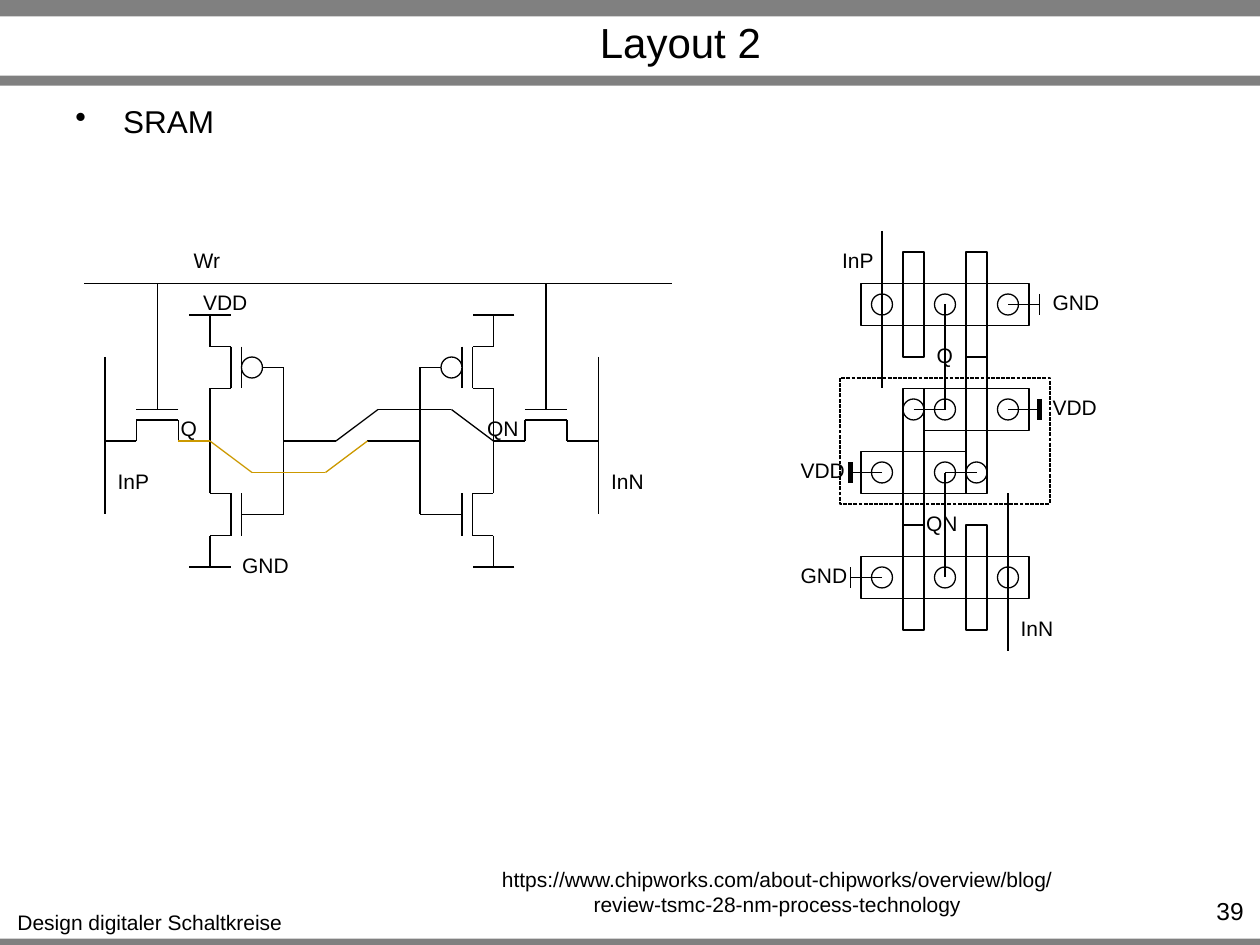
from dataclasses import dataclass

from lxml import etree
from pptx import Presentation
from pptx import util as u
from pptx.dml.color import RGBColor
from pptx.enum import dml, shapes, text
from pptx.oxml.ns import qn

COLS, ROWS = 120, 90  # the drawing grid: twelve steps to the inch
UNIT = u.Inches(10) // COLS


@dataclass(frozen=True)
class Theme:
    font: str = "Arial"
    ink: RGBColor = RGBColor(0, 0, 0)
    paper: RGBColor = RGBColor(255, 255, 255)
    band: RGBColor = RGBColor(0x80, 0x80, 0x80)
    accent: RGBColor = RGBColor(0xCC, 0x99, 0x00)
    title: int = 24
    body: int = 18
    number: int = 14
    label: int = 12
    thin: float = 0.75
    thick: float = 3


THEME = Theme()
LABEL_WIDTH = {"InP": 0.45, "InN": 0.46, "Wr": 0.41, "VDD": 0.56,
               "GND": 0.58, "Q": 0.33, "QN": 0.45}


def grid(steps):
    return u.Emu(round(steps * UNIT))


def as_is(x, y):
    return x, y


def mirrored(x, y):
    """Right half of the schematic: reflected about its middle column."""
    return 67 - x, y


def turned(x, y):
    """Lower half of the layout: half a turn about the cell's middle."""
    return 180 - x, 84 - y


# Kinds of element
def wire(slide, place, *points, color=THEME.ink, width=THEME.thin):
    """Straight connectors through the given grid points."""
    spots = [[grid(v) for v in place(*point)] for point in points]
    for start, end in zip(spots, spots[1:]):
        line = slide.shapes.add_connector(
            shapes.MSO_CONNECTOR.STRAIGHT, *start, *end)
        line.line.color.rgb = color
        line.line.width = u.Pt(width)
        etree.SubElement(line._element.spPr, qn("a:effectLst"))


def outline(slide, place, x1, y1, x2, y2,
            kind=shapes.MSO_SHAPE.RECTANGLE, fill=None, dash=None):
    """A shape between two opposite grid corners."""
    (ax, ay), (bx, by) = place(x1, y1), place(x2, y2)
    shape = slide.shapes.add_shape(
        kind, grid(min(ax, bx)), grid(min(ay, by)),
        grid(abs(bx - ax)), grid(abs(by - ay)))
    shape.shadow.inherit = False
    if fill is None:
        shape.fill.background()
    else:
        shape.fill.solid()
        shape.fill.fore_color.rgb = fill
    shape.line.color.rgb = THEME.ink
    shape.line.width = u.Pt(THEME.thin)
    if dash:
        shape.line.dash_style = dash


def contact(slide, place, x, y, fill=None):
    outline(slide, place, x - 1, y - 1, x + 1, y + 1,
            shapes.MSO_SHAPE.OVAL, fill)


def band(slide, top, height):
    bar = slide.shapes.add_shape(shapes.MSO_SHAPE.RECTANGLE, 0, u.Inches(top),
                                 grid(COLS), u.Inches(height))
    bar.shadow.inherit = False
    bar.fill.solid()
    bar.fill.fore_color.rgb = THEME.band
    bar.line.fill.background()


def style(paragraph, size, align):
    paragraph.alignment = align
    paragraph.font.name = THEME.font
    paragraph.font.size = u.Pt(size)
    paragraph.font.color.rgb = THEME.ink


def words(slide, content, left, top, width, height, size=THEME.label,
          align=text.PP_ALIGN.CENTER, wrap=True):
    """A text box placed in inches; returns its paragraph."""
    box = slide.shapes.add_textbox(*map(u.Inches, (left, top, width, height)))
    box.text_frame.word_wrap = wrap
    if not wrap:
        box.text_frame.auto_size = text.MSO_AUTO_SIZE.SHAPE_TO_FIT_TEXT
    paragraph = box.text_frame.paragraphs[0]
    paragraph.text = content
    style(paragraph, size, align)
    return paragraph


def label(slide, name, col, row):
    words(slide, name, col / 12, row / 12, LABEL_WIDTH[name], 0.3, wrap=False)


# Parts of the slide
def frame(slide):
    for top, height in ((7.45, 0.08), (0, 0.13), (0.6, 0.08)):
        band(slide, top, height)
    title = slide.shapes.title
    title.left, title.top, title.width, title.height = map(
        u.Inches, (1.3, 0.14, 8.2, 0.38))
    title.text_frame.text = "Layout 2"
    title.text_frame.vertical_anchor = text.MSO_ANCHOR.MIDDLE
    style(title.text_frame.paragraphs[0], THEME.title, text.PP_ALIGN.CENTER)

    topic = words(slide, "SRAM", 0.5, 0.76, 9, 0.66, THEME.body,
                  text.PP_ALIGN.LEFT)
    properties = topic._p.get_or_add_pPr()
    properties.set("marL", str(u.Inches(0.38)))
    properties.set("indent", str(-u.Inches(0.38)))
    bullet = etree.Element(qn("a:buChar"), char="•")
    properties.insert(0, bullet)

    words(slide, "Design digitaler Schaltkreise", 0.03, 7.17, 2.32, 0.3,
          wrap=False)
    words(slide, "39", 9.1, 7.06, 0.87, 0.24, THEME.number,
          text.PP_ALIGN.RIGHT)
    words(slide, "https://www.chipworks.com/about-chipworks/overview/blog/"
          "review-tsmc-28-nm-process-technology", 3.67, 6.83, 5, 0.5)


def inverter_half(slide, place):
    """Inverter, access transistor and bit line of one schematic side."""
    for y in (35, 49):  # pull-up and pull-down transistor
        wire(slide, place, (20, y - 2), (22, y - 2), (22, y + 2), (20, y + 2))
        wire(slide, place, (23, y - 2), (23, y + 2))
        wire(slide, place, (23, y), (25, y), (27, y))
    contact(slide, place, 24, 35, THEME.paper)
    wire(slide, place, (20, 30), (20, 33))
    wire(slide, place, (20, 37), (20, 40), (20, 44), (20, 47))
    wire(slide, place, (20, 51), (20, 54))
    for rail in (30, 54):
        wire(slide, place, (18, rail), (22, rail))
    wire(slide, place, (27, 35), (27, 49))
    wire(slide, place, (27, 42), (32, 42))
    # Access transistor, bit line and gate lead
    wire(slide, place, (20, 42), (17, 42), (17, 40), (13, 40), (13, 42),
         (10, 42))
    wire(slide, place, (17, 39), (13, 39))
    wire(slide, place, (15, 39), (15, 37), (15, 35), (15, 27))
    wire(slide, place, (10, 34), (10, 49))


def schematic(slide):
    for place in (mirrored, as_is):
        inverter_half(slide, place)
    # Cross coupling and word line
    wire(slide, as_is, (17, 42), (20, 42), (24, 45), (31, 45), (35, 42),
         color=THEME.accent)
    wire(slide, as_is, (32, 42), (36, 39), (43, 39), (47, 42))
    wire(slide, as_is, (64, 27), (8, 27))
    for name, col, row in (("InP", 10, 44), ("InN", 57, 44), ("Wr", 17.25, 23),
                           ("VDD", 18.1, 27), ("GND", 21.8, 52),
                           ("Q", 16, 39), ("QN", 45.2, 39)):
        label(slide, name, col, row)


def layout_half(slide, place):
    """Diffusion, gates, contacts and metal of one half of the cell."""
    for left in (82, 88):  # access and pull-down diffusion
        outline(slide, place, left, 27, left + 10, 31)
    for left in (86, 92):
        outline(slide, place, left, 24, left + 2, 34)
    outline(slide, place, 88, 37, 98, 41)  # pull-up
    outline(slide, place, 92, 34, 94, 47)
    for x, y in ((84, 29), (90, 29), (96, 29), (90, 39), (96, 39), (87, 39)):
        contact(slide, place, x, y)
    for y, width in ((29, THEME.thin), (39, THEME.thick)):  # GND and VDD
        wire(slide, place, (96, y), (99, y))
        wire(slide, place, (99, y - 1), (99, y + 1), width=width)
    wire(slide, place, (84, 22), (84, 37))
    wire(slide, place, (87, 39), (90, 39), (90, 29))


def cell_layout(slide):
    for place in (turned, as_is):
        layout_half(slide, place)
    # Well
    outline(slide, as_is, 80, 36, 100, 48, dash=dml.MSO_LINE.SQUARE_DOT)
    for name, col, row in (("InN", 96, 58), ("QN", 87, 48), ("Q", 88, 32),
                           ("InP", 79, 23), ("VDD", 75, 43), ("VDD", 99, 37),
                           ("GND", 75, 53), ("GND", 99, 27)):
        label(slide, name, col, row)


def main():
    deck = Presentation()
    deck.slide_width, deck.slide_height = grid(COLS), grid(ROWS)
    slide = deck.slides.add_slide(deck.slide_layouts[5])
    frame(slide)
    cell_layout(slide)
    schematic(slide)
    deck.save("out.pptx")


if __name__ == "__main__":
    main()
